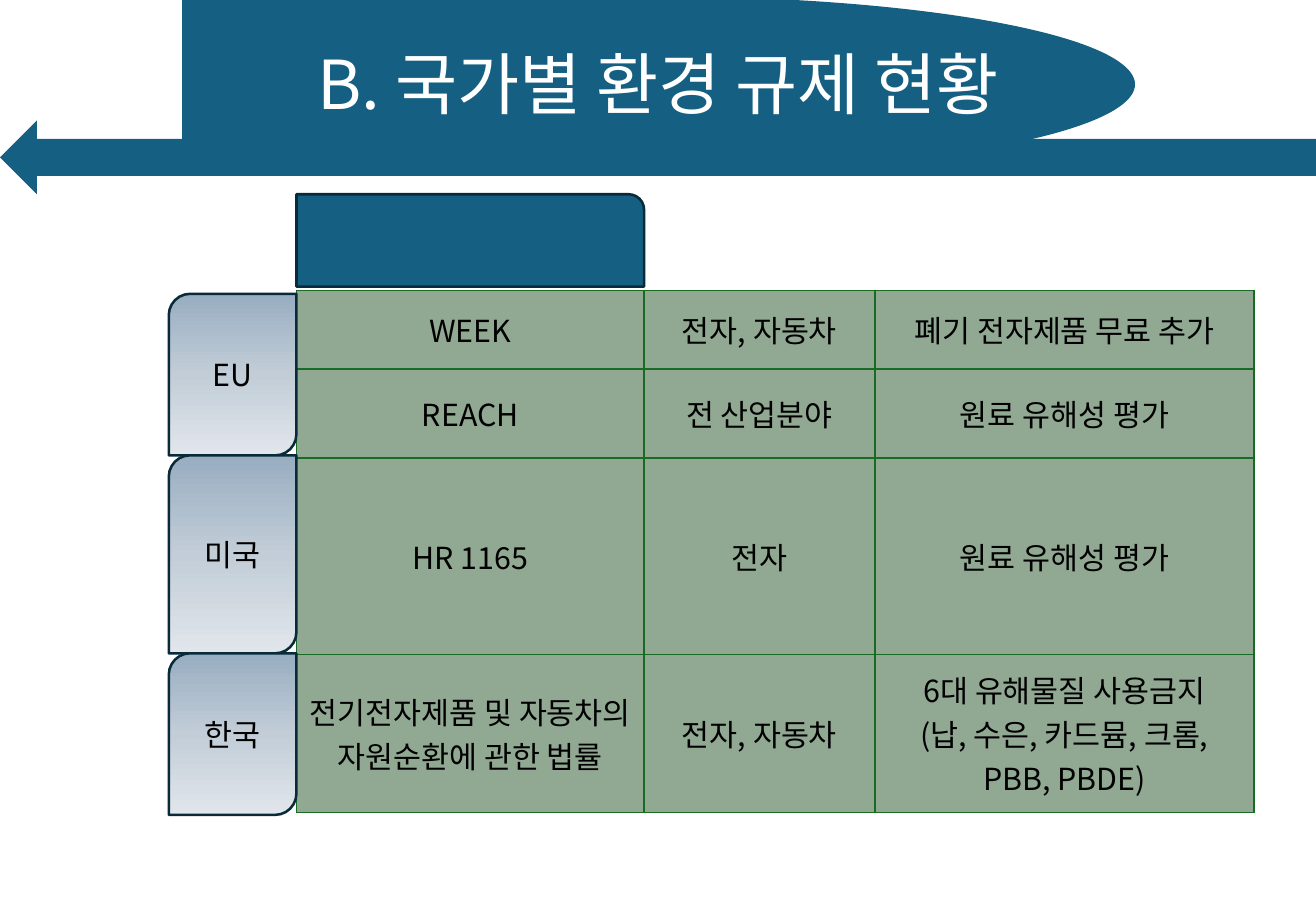
from copy import deepcopy
from dataclasses import dataclass

from lxml import etree
from pptx import Presentation
from pptx.dml.color import RGBColor
from pptx.enum.shapes import MSO_SHAPE
from pptx.enum.text import MSO_ANCHOR, PP_ALIGN
from pptx.oxml.ns import qn
from pptx.util import Inches, Pt

ARROW = MSO_SHAPE.LEFT_ARROW
DELAY = MSO_SHAPE.FLOWCHART_DELAY
HEADER = MSO_SHAPE.ROUND_1_RECTANGLE
TAB = MSO_SHAPE.ROUND_2_DIAG_RECTANGLE
MIDDLE = MSO_ANCHOR.MIDDLE
CENTER = PP_ALIGN.CENTER

WIDTH, HEIGHT = Inches(10.83), Inches(7.5)
GRID = 100  # columns and rows on the slide


@dataclass(frozen=True)
class Theme:
    font: str = "Noto Sans CJK KR"
    title: int = 40
    body: int = 18
    accent: str = "156082"
    outline: str = "092A39"
    cell: str = "91A893"
    border: str = "196B24"
    white: str = "FFFFFF"
    black: str = "000000"
    tab: tuple = ("98ADC1", "C2CDD7", "E1E6EB")


THEME = Theme()

COUNTRIES = [("EU", 17.73), ("미국", 21.73), ("한국", 17.73)]
COLUMNS = [26.41, 17.54, 28.81]
ROWS = [8.67, 9.73, 21.6, 17.33]
REGULATIONS = [
    ["WEEK", "전자, 자동차", "폐기 전자제품 무료 추가"],
    ["REACH", "전 산업분야", "원료 유해성 평가"],
    ["HR 1165", "전자", "원료 유해성 평가"],
    ["전기전자제품 및 자동차의 자원순환에 관한 법률", "전자, 자동차",
     "6대 유해물질 사용금지\n(납, 수은, 카드뮴, 크롬, PBB, PBDE)"],
]


def col(n):
    return round(WIDTH * n / GRID)


def row(n):
    return round(HEIGHT * n / GRID)


def place(x, y, w, h):
    return col(x), row(y), col(w), row(h)


def rgb(value):
    return RGBColor.from_string(value)


def add_text(tf, text, size=THEME.body, color=THEME.black, spacing=None):
    tf.word_wrap = True
    for i, line in enumerate(text.split("\n")):
        p = tf.add_paragraph() if i else tf.paragraphs[0]
        p.alignment = CENTER
        if spacing:
            p.line_spacing = spacing
        r = p.add_run()
        r.text = line
        r.font.size = Pt(size)
        r.font.color.rgb = rgb(color)
        r.font.name = THEME.font
        etree.SubElement(r.font._element, qn("a:ea"), typeface=THEME.font)


def fill_gradient(sp, colors):
    """Fill from top to bottom with three evenly spaced colours."""
    sp.fill.gradient()
    sp.fill.gradient_angle = 270
    first = sp.fill._xPr.find(qn("a:gradFill")).find(qn("a:gsLst"))[0]
    first.addnext(deepcopy(first))
    for i, (stop, color) in enumerate(zip(sp.fill.gradient_stops, colors)):
        stop.position = i / 2
        stop.color.rgb = rgb(color)


def add_block(s, kind, box, fill=THEME.accent, outline=None):
    sp = s.shapes.add_shape(kind, *place(*box))
    sp.shadow.inherit = False
    if isinstance(fill, tuple):
        fill_gradient(sp, fill)
    else:
        sp.fill.solid()
        sp.fill.fore_color.rgb = rgb(fill)
    if outline:
        sp.line.color.rgb = rgb(outline)
        sp.line.width = Pt(1.5)
    else:
        sp.line.fill.background()
    return sp


def style_cell(cell):
    cell.vertical_anchor = MIDDLE
    cell.fill.solid()
    cell.fill.fore_color.rgb = rgb(THEME.cell)
    tc_pr = cell._tc.get_or_add_tcPr()
    for i, side in enumerate(("a:lnL", "a:lnR", "a:lnT", "a:lnB")):
        ln = etree.Element(qn(side), w=str(Pt(1)))
        solid = etree.SubElement(ln, qn("a:solidFill"))
        etree.SubElement(solid, qn("a:srgbClr"), val=THEME.border)
        tc_pr.insert(i, ln)


def add_banner(s, x, y, w, h):
    add_block(s, ARROW, (x, y + h * 0.62, w, h * 0.38))
    add_block(s, DELAY, (x + w * 0.1385, y - 0.4, w * 0.724, 19.33))
    title = s.shapes.add_textbox(*place(x + w * 0.17, y, w * 0.66, 19.33))
    title.text_frame.vertical_anchor = MIDDLE
    add_text(title.text_frame, "B. 국가별 환경 규제 현황", size=THEME.title,
             color=THEME.white, spacing=0.9)


def add_regulation_table(s, x, y):
    frame = s.shapes.add_table(len(ROWS), len(COLUMNS),
                               *place(x, y, sum(COLUMNS), sum(ROWS)))
    table = frame.table
    for column, width in zip(table.columns, COLUMNS):
        column.width = col(width)
    for line, height, texts in zip(table.rows, ROWS, REGULATIONS):
        line.height = row(height)
        for cell, text in zip(line.cells, texts):
            style_cell(cell)
            add_text(cell.text_frame, text)


def add_country_tabs(s, x, y, w):
    for name, h in COUNTRIES:
        sp = add_block(s, TAB, (x, y, w, h), THEME.tab, THEME.outline)
        sp.text_frame.vertical_anchor = MIDDLE
        add_text(sp.text_frame, name)
        y += h


def add_regulations(s, x, y, tab_width):
    left = x + tab_width
    add_regulation_table(s, left, y + 10.53)
    add_block(s, HEADER, (left, y, COLUMNS[0], 10.13), outline=THEME.outline)
    add_country_tabs(s, x, y + 10.93, tab_width)


def main():
    prs = Presentation()
    prs.slide_width, prs.slide_height = WIDTH, HEIGHT
    s = prs.slides.add_slide(prs.slide_layouts[6])
    add_banner(s, 0, 0, GRID, 21.33)
    add_regulations(s, 12.83, 21.33, 9.7)
    prs.save("out.pptx")


if __name__ == "__main__":
    main()
